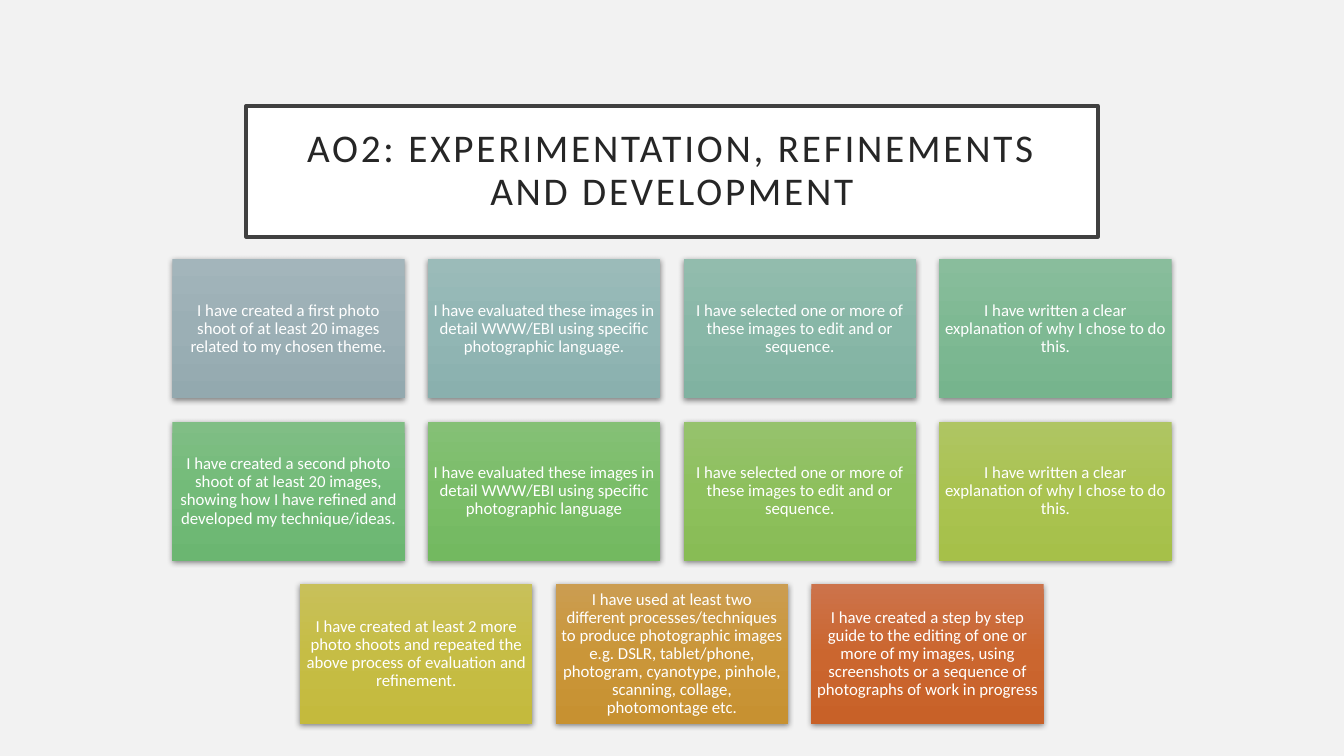
from pptx import Presentation
from pptx.dml.color import RGBColor
from pptx.enum.shapes import MSO_SHAPE
from pptx.enum.text import MSO_ANCHOR, MSO_AUTO_SIZE, PP_ALIGN
from pptx.oxml import parse_xml
from pptx.oxml.ns import nsdecls
from pptx.util import Pt

RECTANGLE = MSO_SHAPE.RECTANGLE
MIDDLE = MSO_ANCHOR.MIDDLE
NO_AUTOFIT = MSO_AUTO_SIZE.NONE
CENTER = PP_ALIGN.CENTER

FONT = "Calibri"
COLORS = {
    "background": "F2F2F2",
    "panel": "FFFFFF",
    "border": "404040",
    "heading": "262626",
    "card text": "FFFFFF",
    "shadow": "000000",
}
SLIDE_WIDTH, SLIDE_HEIGHT = 960, 540
CARD_WIDTH, CARD_HEIGHT = 166, 99.6
GAP = 16.6
CARDS_TOP = 185

# Each row of cards: wording, then gradient colours from top to bottom
CHECKLIST = [
    [
        ("I have created a first photo shoot of at least 20 images related to my chosen theme.",
         ("A3B5BB", "9BAFB5", "93A9AF")),
        ("I have evaluated these images in detail WWW/EBI using specific photographic language.",
         ("9BBBB9", "91B6B4", "8AB0AE")),
        ("I have selected one or more of these images to edit and or sequence.",
         ("92BCAD", "88B7A7", "80B2A1")),
        ("I have written a clear explanation of why I chose to do this.",
         ("89BD9C", "7EB993", "76B48D")),
    ],
    [
        ("I have created a second photo shoot of at least 20 images, showing how I have "
         "refined and developed my technique/ideas.",
         ("80BE85", "73BB79", "6BB671")),
        ("I have evaluated these images in detail WWW/EBI using specific photographic language",
         ("85C076", "7ABD68", "73B960")),
        ("I have selected one or more of these images to edit and or sequence.",
         ("96C26D", "8EC05D", "88BC55")),
        ("I have written a clear explanation of why I chose to do this.",
         ("AFC563", "AAC351", "A6C049")),
    ],
    [
        ("I have created at least 2 more photo shoots and repeated the above process of "
         "evaluation and refinement.",
         ("C8C05A", "C6BD45", "C4BA3D")),
        ("I have used at least two different processes/techniques to produce photographic "
         "images e.g. DSLR, tablet/phone, photogram, cyanotype, pinhole, scanning, collage, "
         "photomontage etc.",
         ("CB9D51", "CA9639", "C79131")),
        ("I have created a step by step guide to the editing of one or more of my images, "
         "using screenshots or a sequence of photographs of work in progress",
         ("CC734B", "CB662F", "C86128")),
    ],
]


def write_centered(shape, text, size, color, inset):
    frame = shape.text_frame
    frame.word_wrap = True
    frame.auto_size = NO_AUTOFIT
    frame.vertical_anchor = MIDDLE
    frame.margin_left = frame.margin_right = Pt(inset)
    frame.margin_top = frame.margin_bottom = Pt(inset)
    paragraph = frame.paragraphs[0]
    paragraph.alignment = CENTER
    paragraph.line_spacing = 0.9
    run = paragraph.add_run()
    run.text = text
    run.font.name = FONT
    run.font.size = Pt(size)
    run.font.color.rgb = RGBColor.from_string(color)
    return run


def add_gradient_and_shadow(shape, gradient):
    stops = "".join(
        f'<a:gs pos="{index * 50000}"><a:srgbClr val="{color}"/></a:gs>'
        for index, color in enumerate(gradient)
    )
    properties = shape._element.spPr
    properties.append(parse_xml(
        f'<a:gradFill {nsdecls("a")} rotWithShape="1"><a:gsLst>{stops}</a:gsLst>'
        '<a:lin ang="5400000" scaled="0"/></a:gradFill>'
    ))
    properties.append(parse_xml(
        f'<a:effectLst {nsdecls("a")}>'
        f'<a:outerShdw blurRad="{Pt(4.4)}" dist="{Pt(1.2)}" dir="5400000" rotWithShape="0">'
        f'<a:srgbClr val="{COLORS["shadow"]}"><a:alpha val="45000"/></a:srgbClr>'
        '</a:outerShdw></a:effectLst>'
    ))


presentation = Presentation()
presentation.slide_width = Pt(SLIDE_WIDTH)
presentation.slide_height = Pt(SLIDE_HEIGHT)
slide = presentation.slides.add_slide(presentation.slide_layouts[5])
slide.background.fill.solid()
slide.background.fill.fore_color.rgb = RGBColor.from_string(COLORS["background"])

heading = slide.shapes.title
heading.left, heading.top = Pt(175.8), Pt(75.6)
heading.width, heading.height = Pt(608.4), Pt(93.6)
heading.fill.solid()
heading.fill.fore_color.rgb = RGBColor.from_string(COLORS["panel"])
heading.line.color.rgb = RGBColor.from_string(COLORS["border"])
heading.line.width = Pt(2.5)
heading_run = write_centered(
    heading, "AO2: EXPERIMENTATION, REFINEMENTS AND DEVELOPMENT",
    28, COLORS["heading"], 14.4,
)
heading_run.font._element.set("spc", "200")

for row, cards in enumerate(CHECKLIST):
    row_width = len(cards) * (CARD_WIDTH + GAP) - GAP
    row_left = (SLIDE_WIDTH - row_width) / 2
    row_top = CARDS_TOP + row * (CARD_HEIGHT + GAP)
    for column, (wording, gradient) in enumerate(cards):
        card = slide.shapes.add_shape(
            RECTANGLE, Pt(row_left + column * (CARD_WIDTH + GAP)), Pt(row_top),
            Pt(CARD_WIDTH), Pt(CARD_HEIGHT),
        )
        add_gradient_and_shadow(card, gradient)
        card.line.fill.background()
        write_centered(card, wording, 12, COLORS["card text"], 3.6)

presentation.save("out.pptx")
